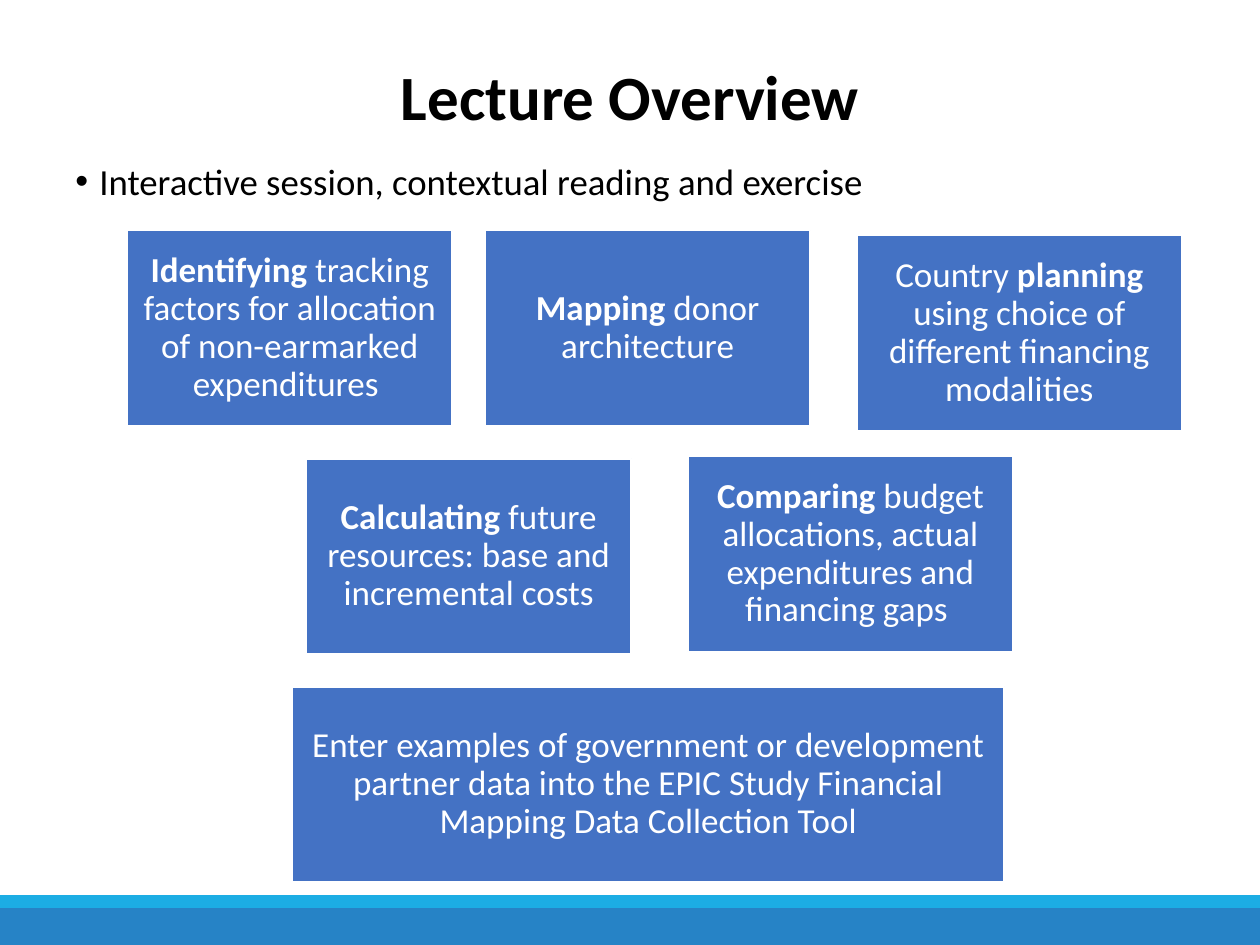
"""Build the lecture overview slide."""
from lxml.etree import SubElement
from pptx import Presentation
from pptx.dml.color import RGBColor
from pptx.enum.shapes import MSO_SHAPE
from pptx.enum.text import MSO_ANCHOR, PP_ALIGN
from pptx.oxml.ns import qn
from pptx.util import Inches, Pt

THEME = dict(font="Calibri", ink="000000", white="FFFFFF", box="4472C4",
             deep="2683C6", light="1CADE4", title=36, body=21, card=20)

TITLE = "Lecture Overview"
LEAD = "Interactive session, contextual reading and exercise"
SIZE = (2.58, 1.55)
WIDE = (5.65, 1.55)
BANDS = [((0, 7.19, 10, 0.31), "deep"), ((0, 7.11, 10, 0.09), "light")]
CARDS = [
    ((1.01, 1.83), SIZE, [("Identifying", True),
     (" tracking factors for allocation of non-earmarked expenditures ", False)]),
    ((3.85, 1.83), SIZE, [("Mapping", True), (" donor architecture", False)]),
    ((5.46, 3.62), SIZE, [("Comparing", True),
     (" budget allocations, actual expenditures and financing gaps ", False)]),
    ((2.43, 3.64), SIZE, [("Calculating", True),
     (" future resources: base and incremental costs", False)]),
    ((6.8, 1.87), SIZE, [("Country ", False), ("planning", True),
     (" using choice of different financing modalities", False)]),
    ((2.32, 5.45), WIDE, [("Enter examples of government or development partner "
     "data into the EPIC Study Financial Mapping Data Collection Tool", False)]),
]


def tone(name):
    return RGBColor.from_string(THEME[name])


def write(shape, runs, size, color="ink", align=PP_ALIGN.CENTER,
          anchor=MSO_ANCHOR.MIDDLE, inset=None, before=0, bullet=None):
    frame = shape.text_frame
    frame.word_wrap = True
    frame.vertical_anchor = anchor
    if inset is not None:
        frame.margin_left = frame.margin_right = Inches(inset)
        frame.margin_top = frame.margin_bottom = Inches(inset)
    para = frame.paragraphs[0]
    para.alignment = align
    para.line_spacing = 0.9
    para.space_before = Pt(before)
    if bullet:
        props = para._p.get_or_add_pPr()
        props.set("marL", str(Inches(0.19)))
        props.set("indent", str(-Inches(0.19)))
        SubElement(props, qn("a:buFont"), typeface="Arial")
        SubElement(props, qn("a:buChar"), char=bullet)
    for text, bold in runs:
        run = para.add_run()
        run.text = text
        run.font.name = THEME["font"]
        run.font.size = Pt(THEME[size])
        run.font.bold = bold
        run.font.color.rgb = tone(color)


def block(slide, place, fill, line):
    shape = slide.shapes.add_shape(MSO_SHAPE.RECTANGLE, *map(Inches, place))
    shape.shadow.inherit = False
    shape.fill.solid()
    shape.fill.fore_color.rgb = tone(fill)
    shape.line.color.rgb = tone(line)
    shape.line.width = Pt(1)
    return shape


def label(slide, place):
    return slide.shapes.add_textbox(*map(Inches, place))


def main():
    deck = Presentation()
    deck.slide_width, deck.slide_height = Inches(10), Inches(7.5)
    slide = deck.slides.add_slide(deck.slide_layouts[6])
    for place, color in BANDS:
        block(slide, place, color, color)
    write(label(slide, (0.5, 0.17, 9, 1.25)), [(TITLE, True)], "title")
    write(label(slide, (0.5, 1.25, 9, 5.45)), [(LEAD, False)], "body",
          align=PP_ALIGN.LEFT, anchor=MSO_ANCHOR.TOP, before=7.5, bullet="•")
    for spot, size, runs in CARDS:
        card = block(slide, spot + size, "box", "white")
        write(card, runs, "card", color="white", inset=0.08)
    deck.save("out.pptx")


if __name__ == "__main__":
    main()
